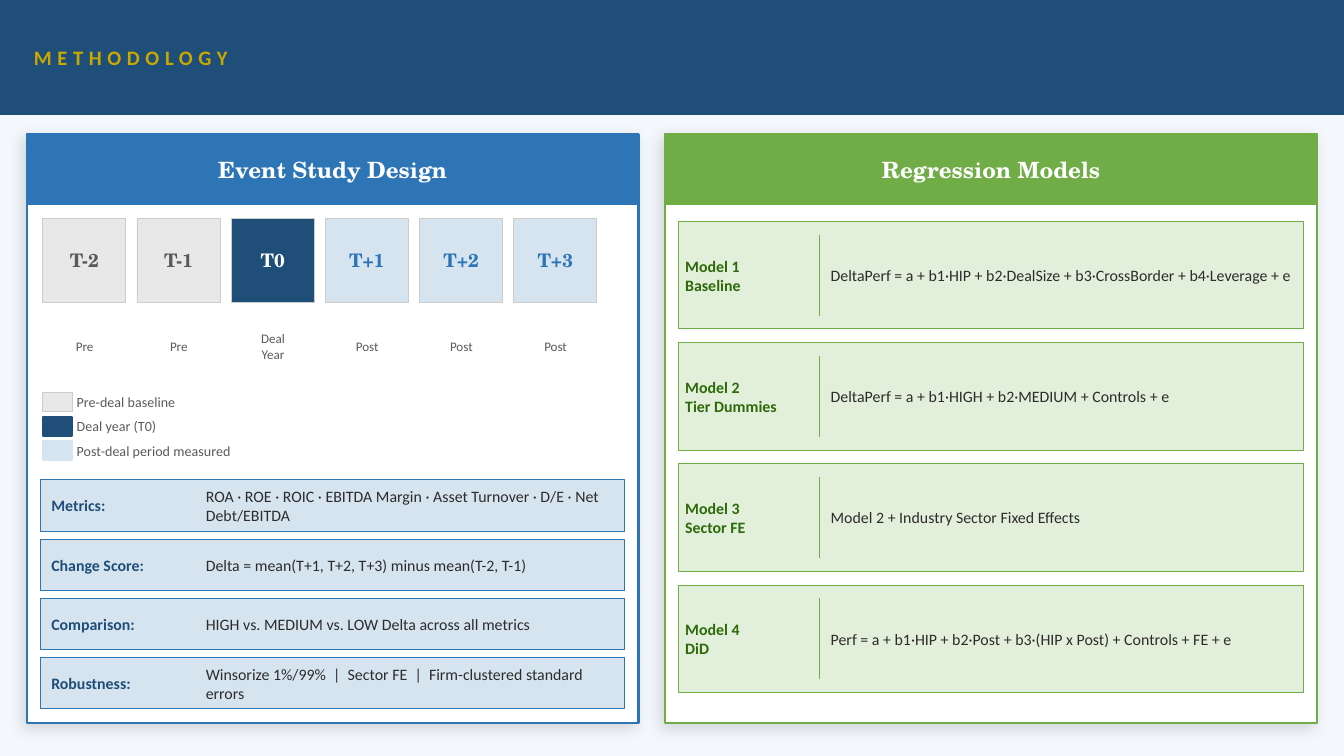
from dataclasses import dataclass

import pptx
import pptx.dml.color
import pptx.enum.shapes
import pptx.enum.text
import pptx.oxml
import pptx.oxml.ns
import pptx.util

Cm = pptx.util.Cm
Pt = pptx.util.Pt
LEFT = pptx.enum.text.PP_ALIGN.LEFT
CENTER = pptx.enum.text.PP_ALIGN.CENTER
RECTANGLE = pptx.enum.shapes.MSO_SHAPE.RECTANGLE


@dataclass(frozen=True)
class Theme:
    body_font: str = "Calibri"
    title_font: str = "TeX Gyre Schola"
    background: str = "F4F8FC"
    white: str = "FFFFFF"
    navy: str = "1F4E79"
    blue: str = "2E75B6"
    pale_blue: str = "D6E4F0"
    green: str = "70AD47"
    pale_green: str = "E2EFDA"
    dark_green: str = "2D6A0A"
    gold: str = "C9A800"
    pale_gray: str = "E8E8E8"
    border_gray: str = "CCCCCC"
    gray: str = "5A5A5A"
    ink: str = "2C2C2C"
    panel_title: float = 12
    kicker: float = 11
    period: float = 10
    body: float = 8.5
    legend: float = 7.5
    caption: float = 7


def rgb(color):
    return pptx.dml.color.RGBColor.from_string(color)


class SlideBuilder:
    def __init__(self, page, theme):
        self.page = page
        self.theme = theme
        page.background.fill.solid()
        page.background.fill.fore_color.rgb = rgb(theme.background)

    def rectangle(self, x, y, width, height, fill, line, weight=1.0):
        box = self.page.shapes.add_shape(RECTANGLE, Cm(x), Cm(y), Cm(width), Cm(height))
        box.fill.solid()
        box.fill.fore_color.rgb = rgb(fill)
        box.line.color.rgb = rgb(line)
        box.line.width = Pt(weight)
        box.shadow.inherit = False
        return box

    def fill_text(self, box, text, size, color, bold=False, font=None, align=LEFT):
        frame = box.text_frame
        frame.word_wrap = True
        frame.vertical_anchor = pptx.enum.text.MSO_ANCHOR.MIDDLE
        frame.margin_left = frame.margin_right = 0
        frame.margin_top = frame.margin_bottom = 0
        frame.text = text
        for para in frame.paragraphs:
            para.alignment = align
            for span in para.runs:
                span.font.name = font or self.theme.body_font
                span.font.size = Pt(size)
                span.font.bold = bold
                span.font.color.rgb = rgb(color)

    def text(self, x, y, width, height, text, size, color, **style):
        box = self.page.shapes.add_textbox(Cm(x), Cm(y), Cm(width), Cm(height))
        self.fill_text(box, text, size, color, **style)
        return box

    def title_block(self, x, y, width, height, text, size, color, fill, line, weight=1.0):
        box = self.rectangle(x, y, width, height, fill, line, weight)
        self.fill_text(box, text, size, color, bold=True, font=self.theme.title_font, align=CENTER)

    def divider(self, x, top, bottom, color):
        line = self.page.shapes.add_connector(
            pptx.enum.shapes.MSO_CONNECTOR.STRAIGHT, Cm(x), Cm(top), Cm(x), Cm(bottom))
        line.line.color.rgb = rgb(color)
        line.line.width = Pt(0.5)
        line._element.spPr.append(pptx.oxml.parse_xml(
            f"<a:effectLst {pptx.oxml.ns.nsdecls('a')}/>"))

    def panel(self, x, width, title, color):
        top = 2.54
        card = self.rectangle(x, top, width, 11.13, self.theme.white, color, 1.5)
        effects = card._element.spPr.find(pptx.oxml.ns.qn("a:effectLst"))
        effects.append(pptx.oxml.parse_xml(
            f'<a:outerShdw {pptx.oxml.ns.nsdecls("a")} blurRad="{Pt(8)}" dist="{Pt(3)}" '
            f'dir="{135 * 60000}" algn="bl" rotWithShape="0">'
            '<a:srgbClr val="000000"><a:alpha val="12000"/></a:srgbClr></a:outerShdw>'))
        self.title_block(x, top, width, 1.32, title, self.theme.panel_title,
                         self.theme.white, color, color)

    def period(self, x, name, caption, fill, color):
        theme = self.theme
        self.title_block(x, 4.14, 1.57, 1.57, name, theme.period, color,
                         fill, theme.border_gray, 0.5)
        self.text(x - 0.1, 5.89, 1.78, 1.32, caption, theme.caption, theme.gray, align=CENTER)

    def legend_entry(self, y, label, fill, line, weight):
        self.rectangle(0.81, y, 0.56, 0.36, fill, line, weight)
        self.text(1.45, y - 0.08, 5.08, 0.51, label, self.theme.legend, self.theme.gray)

    def design_row(self, y, label, detail):
        theme = self.theme
        self.rectangle(0.76, y, 11.05, 0.97, theme.pale_blue, theme.blue, 0.5)
        self.text(0.97, y, 2.92, 0.97, label, theme.body, theme.navy, bold=True)
        self.text(3.89, y, 7.62, 0.97, detail, theme.body, theme.ink)

    def model_row(self, y, label, formula):
        theme = self.theme
        self.rectangle(12.83, y, 11.81, 2.03, theme.pale_green, theme.green, 0.5)
        self.text(12.95, y + 0.1, 2.54, 1.83, label, theme.body, theme.dark_green, bold=True)
        self.divider(15.49, y + 0.25, y + 1.78, theme.green)
        self.text(15.7, y + 0.1, 8.76, 1.83, formula, theme.body, theme.ink)


def main():
    theme = Theme()
    deck = pptx.Presentation()
    deck.slide_width, deck.slide_height = Cm(25.4), Cm(14.29)
    slide = SlideBuilder(deck.slides.add_slide(deck.slide_layouts[6]), theme)

    # Header band
    slide.rectangle(0, 0, 25.4, 2.16, theme.navy, theme.navy)
    kicker = slide.text(0.64, 0, 24.13, 2.16, "METHODOLOGY", theme.kicker, theme.gold, bold=True)
    kicker.text_frame.paragraphs[0].runs[0]._r.get_or_add_rPr().set("spc", "300")

    # Event study: timeline
    slide.panel(0.51, 11.56, "Event Study Design", theme.blue)
    pre = ("Pre", theme.pale_gray, theme.gray)
    deal = ("Deal\nYear", theme.navy, theme.white)
    post = ("Post", theme.pale_blue, theme.blue)
    periods = [("T-2", pre), ("T-1", pre), ("T0", deal),
               ("T+1", post), ("T+2", post), ("T+3", post)]
    for index, (name, phase) in enumerate(periods):
        slide.period(0.81 + 1.78 * index, name, *phase)

    # Event study: legend
    legend = [
        ("Pre-deal baseline", theme.pale_gray, theme.border_gray, 0.5),
        ("Deal year (T0)", theme.navy, theme.navy, 1),
        ("Post-deal period measured", theme.pale_blue, theme.pale_blue, 1),
    ]
    for index, entry in enumerate(legend):
        slide.legend_entry(7.42 + 0.46 * index, *entry)

    # Event study: design choices
    design = [
        ("Metrics:", "ROA · ROE · ROIC · EBITDA Margin · Asset Turnover · D/E · Net Debt/EBITDA"),
        ("Change Score:", "Delta = mean(T+1, T+2, T+3) minus mean(T-2, T-1)"),
        ("Comparison:", "HIGH vs. MEDIUM vs. LOW Delta across all metrics"),
        ("Robustness:", "Winsorize 1%/99%  |  Sector FE  |  Firm-clustered standard errors"),
    ]
    for index, row in enumerate(design):
        slide.design_row(9.07 + 1.12 * index, *row)

    # Regression models
    slide.panel(12.57, 12.32, "Regression Models", theme.green)
    models = [
        ("Model 1\nBaseline",
         "DeltaPerf = a + b1·HIP + b2·DealSize + b3·CrossBorder + b4·Leverage + e"),
        ("Model 2\nTier Dummies", "DeltaPerf = a + b1·HIGH + b2·MEDIUM + Controls + e"),
        ("Model 3\nSector FE", "Model 2 + Industry Sector Fixed Effects"),
        ("Model 4\nDiD", "Perf = a + b1·HIP + b2·Post + b3·(HIP x Post) + Controls + FE + e"),
    ]
    for index, model in enumerate(models):
        slide.model_row(4.19 + 2.29 * index, *model)

    deck.save("out.pptx")


if __name__ == "__main__":
    main()
